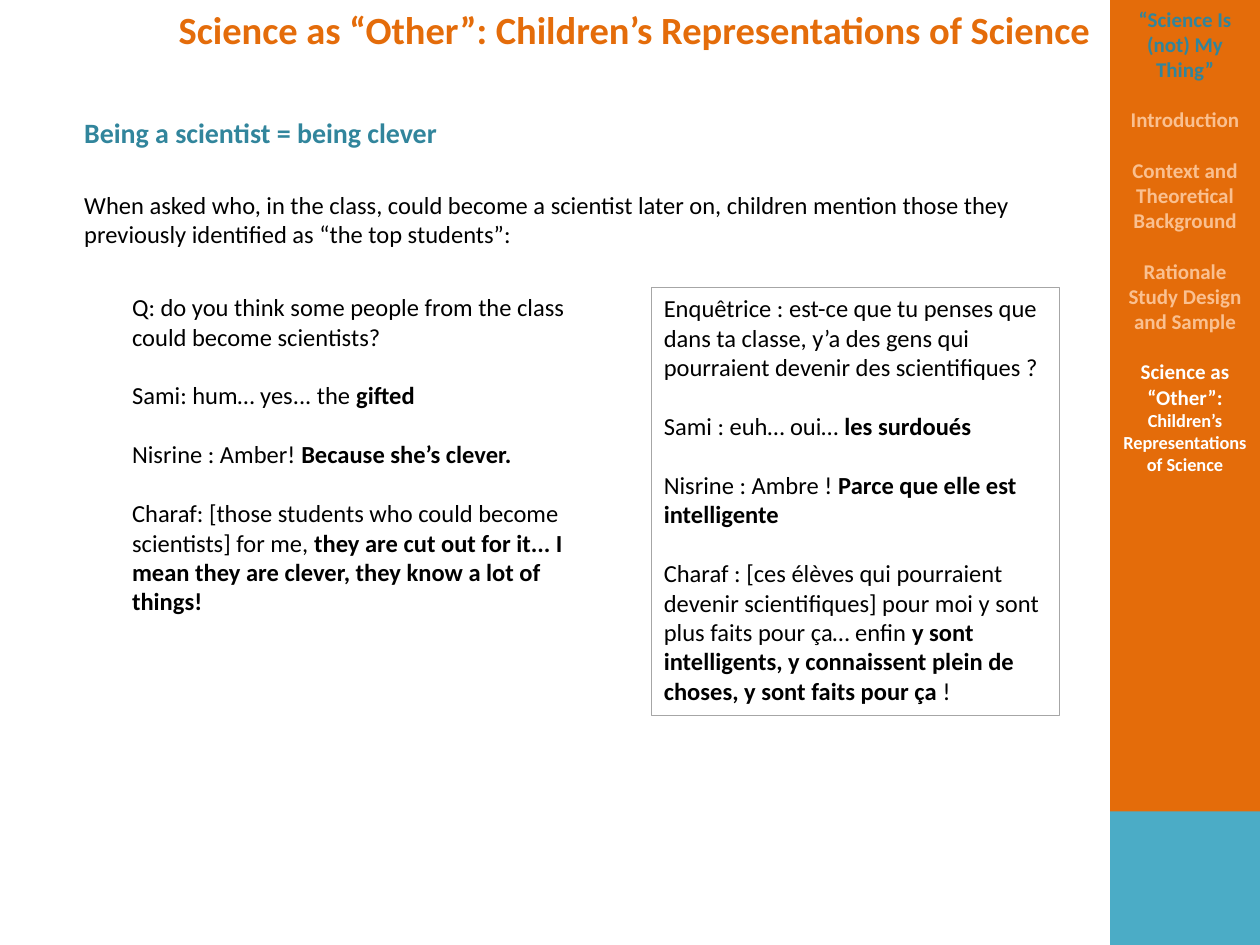
from pptx import Presentation
from pptx.dml.color import RGBColor
from pptx.enum.shapes import MSO_SHAPE
from pptx.enum.text import MSO_ANCHOR, MSO_AUTO_SIZE, PP_ALIGN
from pptx.util import Inches, Pt

RECTANGLE = MSO_SHAPE.RECTANGLE
TOP = MSO_ANCHOR.TOP
NO_AUTOFIT = MSO_AUTO_SIZE.NONE
LEFT, CENTER = PP_ALIGN.LEFT, PP_ALIGN.CENTER

SLIDE_WIDTH, SLIDE_HEIGHT = Inches(10), Inches(7.5)
TITLE_ONLY = 5
LINE_HEIGHT = 1.2
FONT = "Calibri"
ORANGE, PEACH, TEAL, DARK_TEAL = "E46C0A", "FAC090", "4BACC6", "31859C"
BLACK, WHITE, GREY = "000000", "FFFFFF", "A6A6A6"

TITLE_BOX = (12.6, 0, 75.5, 6.27)
BODY_BOX = (5.7, 11.6, 77.2, 66)
ENGLISH_BOX = (9.5, 30.27, 38, 39.07)
FRENCH_BOX = (51.7, 30.4, 32.4, 45.33)
SIDEBAR_BOX = (88.1, 0, 11.9, 100)

TITLE = "Science as “Other”: Children’s Representations of Science"
HEADING = "Being a scientist = being clever"
INTRODUCTION = ("When asked who, in the class, could become a scientist later on, "
                "children mention those they previously identified as “the top students”:")
ENGLISH = [
    ("Q: do you think some people from the class could become scientists?", ""),
    ("Sami: hum… yes... the ", "gifted"),
    ("Nisrine : Amber! ", "Because she’s clever."),
    ("Charaf: [those students who could become scientists] for me, ",
     "they are cut out for it... I mean they are clever, they know a lot of things!"),
]
FRENCH = [
    ("Enquêtrice : est-ce que tu penses que dans ta classe, y’a des gens qui "
     "pourraient devenir des scientifiques ?", ""),
    ("Sami : euh… oui…", " les surdoués"),
    ("Nisrine : Ambre ! ", "Parce que elle est intelligente"),
    ("Charaf : [ces élèves qui pourraient devenir scientifiques] pour moi y sont "
     "plus faits pour ça… enfin ",
     "y sont intelligents, y connaissent plein de choses, y sont faits pour ça", " !"),
]
DECK_NAME = "“Science Is (not) My Thing”"
PAST_SECTIONS = ["Introduction", "Context and Theoretical Background",
                 "Rationale Study Design and Sample"]
CURRENT_SECTION = ("Science as “Other”: ", "Children’s Representations of Science")


def color(value):
    """Turn a hex string into a colour."""
    return RGBColor.from_string(value)


def place(box):
    """Turn a box in percent of the slide into left, top, width and height."""
    sides = (SLIDE_WIDTH, SLIDE_HEIGHT) * 2
    return [round(side * share / 100) for side, share in zip(sides, box)]


def add_run(paragraph, text, size=14, fill=BLACK, bold=False):
    """Add formatted text to a paragraph."""
    run = paragraph.add_run()
    run.text = text
    run.font.name = FONT
    run.font.size = Pt(size)
    run.font.bold = bold
    run.font.color.rgb = color(fill)


def add_paragraph(frame, alignment=LEFT, gap=0):
    """Return the empty first paragraph of a frame, or a new one."""
    paragraph = frame.paragraphs[0]
    if paragraph.runs:
        paragraph = frame.add_paragraph()
    paragraph.alignment = alignment
    paragraph.space_before = Pt(0)
    paragraph.space_after = Pt(gap)
    return paragraph


def add_rectangle(shapes, box, fill=None, line=None):
    """Add a flat rectangle whose text starts at its top."""
    shape = shapes.add_shape(RECTANGLE, *place(box))
    shape.shadow.inherit = False
    if fill:
        shape.fill.solid()
        shape.fill.fore_color.rgb = color(fill)
    else:
        shape.fill.background()
    if line:
        shape.line.color.rgb = color(line)
        shape.line.width = Pt(0.75)
    else:
        shape.line.fill.background()
    shape.text_frame.word_wrap = True
    shape.text_frame.vertical_anchor = TOP
    return shape


def add_title(slide, box):
    """Format the title placeholder inside a box."""
    title = slide.shapes.title
    title.left, title.top, title.width, title.height = place(box)
    frame = title.text_frame
    frame.auto_size = NO_AUTOFIT
    frame.vertical_anchor = TOP
    frame.word_wrap = False
    add_run(add_paragraph(frame, CENTER), TITLE, size=22, fill=ORANGE, bold=True)


def add_body(slide, box):
    """Add the heading and the sentence that introduces the quotations."""
    frame = slide.shapes.add_textbox(*place(box)).text_frame
    frame.word_wrap = True
    add_run(add_paragraph(frame, gap=23), HEADING, size=16, fill=DARK_TEAL, bold=True)
    add_run(add_paragraph(frame), INTRODUCTION)


def add_dialogue(slide, box, turns, line=None):
    """Add an interview whose turns alternate plain and bold text."""
    frame = add_rectangle(slide.shapes, box, line=line).text_frame
    for turn in turns:
        paragraph = add_paragraph(frame, gap=14 * LINE_HEIGHT)
        for index, text in enumerate(turn):
            if text:
                add_run(paragraph, text, bold=index % 2 == 1)


def add_sidebar(slide, box):
    """Add the navigation column with its coloured foot."""
    left, top, width, height = box
    foot = height * 0.1413
    shapes = slide.shapes.add_group_shape().shapes
    column = add_rectangle(shapes, (left, top, width, height * 0.9453), ORANGE)
    add_rectangle(shapes, (left, top + height - foot, width, foot), TEAL)
    entries = [(DECK_NAME, DARK_TEAL)] + [(name, PEACH) for name in PAST_SECTIONS]
    for text, fill in entries:
        paragraph = add_paragraph(column.text_frame, CENTER, 12 * LINE_HEIGHT)
        add_run(paragraph, text, size=12, fill=fill, bold=True)
    paragraph = add_paragraph(column.text_frame, CENTER)
    for text, size in zip(CURRENT_SECTION, (12, 10.5)):
        add_run(paragraph, text, size=size, fill=WHITE, bold=True)


def main():
    """Build and save the slide."""
    presentation = Presentation()
    presentation.slide_width, presentation.slide_height = SLIDE_WIDTH, SLIDE_HEIGHT
    slide = presentation.slides.add_slide(presentation.slide_layouts[TITLE_ONLY])
    add_body(slide, BODY_BOX)
    add_sidebar(slide, SIDEBAR_BOX)
    add_title(slide, TITLE_BOX)
    add_dialogue(slide, FRENCH_BOX, FRENCH, line=GREY)
    add_dialogue(slide, ENGLISH_BOX, ENGLISH)
    presentation.save("out.pptx")


if __name__ == "__main__":
    main()
